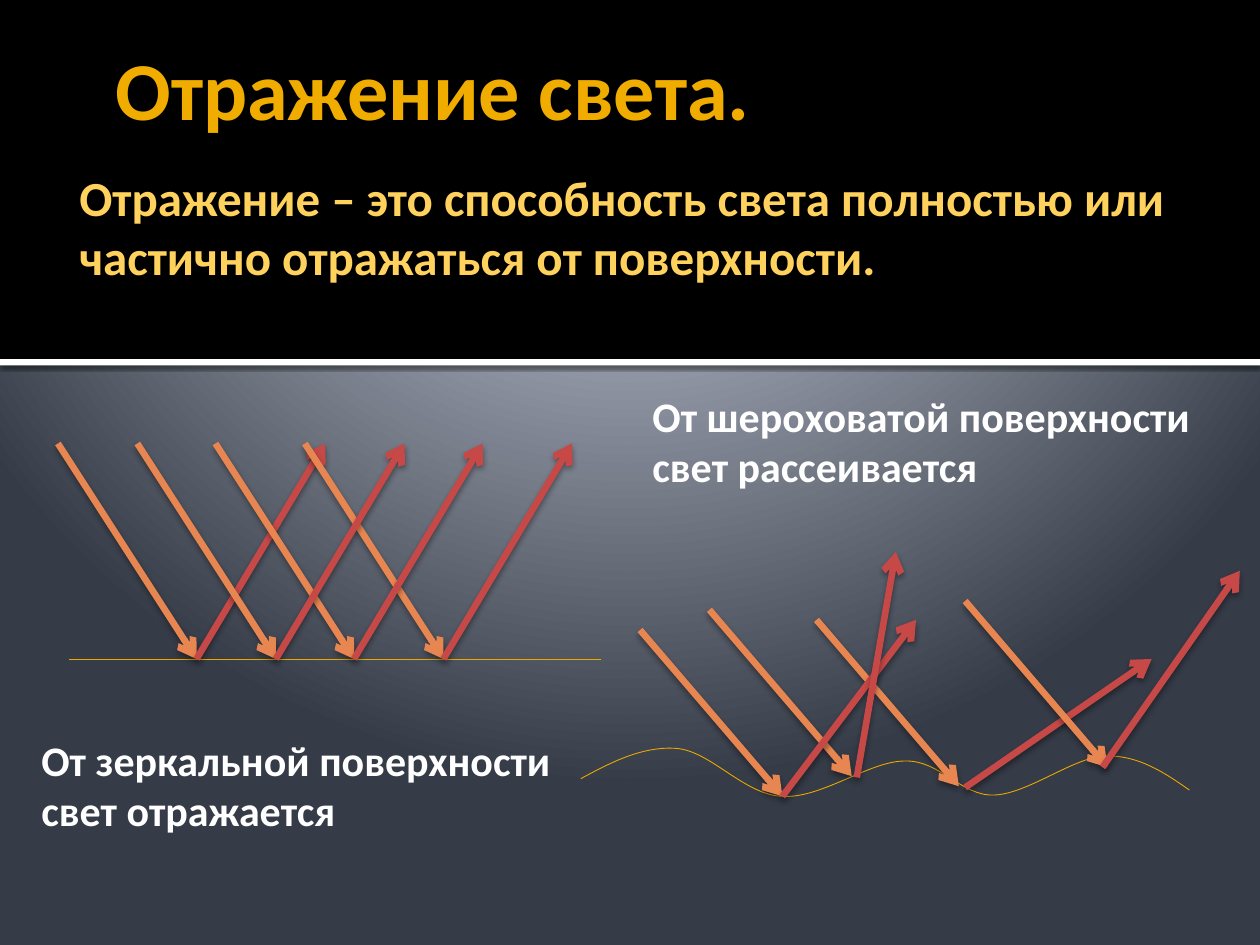
import pptx
import pptx.util
import pptx.dml.color
import pptx.enum.shapes
import pptx.enum.text
import pptx.oxml
import pptx.oxml.ns

COLS, ROWS = 10, 7.5
GOLD, INCIDENT, REFLECTED = "EBA900", "E88651", "C64847"
RAY_SHADOW = ("000000", 38, 3.5, 2, 90)
BAR_SHADOW = ("000000", 60, 2.5, 0.8, 90)
NS = pptx.oxml.ns.nsdecls("a")
qn = pptx.oxml.ns.qn


def rgb(value):
    return pptx.dml.color.RGBColor.from_string(value)


def xml(text):
    return pptx.oxml.parse_xml(text)


class Deck:
    """Holds the style and the current slide; lengths are grid columns and rows."""

    font = "Calibri"

    def __init__(self):
        self.prs = pptx.Presentation()
        self.prs.slide_width = pptx.util.Inches(10)
        self.prs.slide_height = pptx.util.Inches(7.5)
        self.s = self.prs.slides.add_slide(self.prs.slide_layouts[6])

    def x(self, col):
        return round(self.prs.slide_width * col / COLS)

    def y(self, row):
        return round(self.prs.slide_height * row / ROWS)

    def box(self, left, top, width, height):
        return self.x(left), self.y(top), self.x(width), self.y(height)

    def background(self, stops, left, top, right, bottom):
        fill = self.s.background.fill
        fill.gradient()
        grad = self.s.background._cSld.find(".//" + qn("a:gradFill"))
        gs = "".join(f'<a:gs pos="{pos * 1000}"><a:srgbClr val="{color}"/></a:gs>'
                     for pos, color in stops)
        grad.getparent().replace(grad, xml(
            f'<a:gradFill {NS} rotWithShape="1"><a:gsLst>{gs}</a:gsLst>'
            f'<a:path path="circle"><a:fillToRect l="{left * 1000}" t="{top * 1000}" '
            f'r="{right * 1000}" b="{bottom * 1000}"/></a:path></a:gradFill>'))

    def shadow(self, sp, effect=None):
        inner = ""
        if effect:
            color, alpha, blur, dist, angle = effect
            inner = (f'<a:outerShdw blurRad="{round(blur * 12700)}" '
                     f'dist="{round(dist * 12700)}" dir="{angle * 60000}" '
                     f'algn="ctr" rotWithShape="0"><a:srgbClr val="{color}">'
                     f'<a:alpha val="{alpha * 1000}"/></a:srgbClr></a:outerShdw>')
        spPr = sp._element.spPr
        for old in spPr.findall(qn("a:effectLst")):
            spPr.remove(old)
        spPr.append(xml(f"<a:effectLst {NS}>{inner}</a:effectLst>"))

    def rect(self, left, top, width, height, color, effect=None):
        sp = self.s.shapes.add_shape(pptx.enum.shapes.MSO_SHAPE.RECTANGLE,
                                     *self.box(left, top, width, height))
        sp.fill.solid()
        sp.fill.fore_color.rgb = rgb(color)
        sp.line.fill.background()
        self.shadow(sp, effect)

    def outline(self, sp, color, width):
        sp.line.color.rgb = rgb(color)
        sp.line.width = pptx.util.Pt(width)

    def line(self, start, end, color, width=0.5):
        sp = self.s.shapes.add_connector(
            pptx.enum.shapes.MSO_CONNECTOR.STRAIGHT,
            self.x(start[0]), self.y(start[1]), self.x(end[0]), self.y(end[1]))
        self.outline(sp, color, width)
        self.shadow(sp)
        return sp

    def ray(self, start, end, color):
        sp = self.line(start, end, color, 3.78)
        sp.line._get_or_add_ln().append(xml(f'<a:tailEnd {NS} type="arrow"/>'))
        self.shadow(sp, RAY_SHADOW)

    def curve(self, points, color, width=0.5):
        """Points are a start, then two handles and an end for each Bezier part."""
        pts = [(self.x(col), self.y(row)) for col, row in points]
        builder = self.s.shapes.build_freeform(*pts[0])
        builder.add_line_segments(pts[1:], close=False)
        sp = builder.convert_to_shape()
        steps = sp._element.findall(".//" + qn("a:lnTo"))
        for i in range(0, len(steps), 3):
            bezier = xml(f"<a:cubicBezTo {NS}/>")
            steps[i].addprevious(bezier)
            for step in steps[i:i + 3]:
                bezier.append(step[0])
                step.getparent().remove(step)
        sp.fill.background()
        self.outline(sp, color, width)
        self.shadow(sp)

    def text(self, words, left, top, width, height, size, color,
             insets=(0.1, 0.05, 0.1, 0.05), anchor="TOP"):
        sp = self.s.shapes.add_textbox(*self.box(left, top, width, height))
        tf = sp.text_frame
        sides = ("margin_left", "margin_top", "margin_right", "margin_bottom")
        frame = {side: pptx.util.Inches(v) for side, v in zip(sides, insets)}
        frame["word_wrap"] = True
        frame["vertical_anchor"] = getattr(pptx.enum.text.MSO_ANCHOR, anchor)
        for name, value in frame.items():
            setattr(tf, name, value)
        r = tf.paragraphs[0].add_run()
        r.text = words
        style = {"name": self.font, "size": pptx.util.Pt(size), "bold": True}
        for name, value in style.items():
            setattr(r.font, name, value)
        r.font.color.rgb = rgb(color)


def main():
    deck = Deck()

    # Backdrop and header band
    deck.background([(0, "C1C5D3"), (12, "C1C5D3"), (20, "BFC4D2"), (100, "353B47")],
                    10, -25, 10, 125)
    deck.rect(0, 0, COLS, 2.85, "000000")
    deck.rect(0, 2.85, COLS, 0.05, "FFFFFF", BAR_SHADOW)

    # Title and definition
    deck.text("Отражение света.", 0.82, 0.13, 8.76, 0.96, 47, "F0AD00",
              (0.1, 0, 0.1, 0), "BOTTOM")
    deck.text("Отражение – это способность света полностью или частично "
              "отражаться от поверхности.", 0.47, 1.33, 9.09, 1.02, 28, "FFD25D",
              (0.16, 0, 0.05, 0))

    # Mirror: parallel rays stay parallel
    top, mirror = 3.52, 5.23
    deck.line((0.55, mirror), (4.77, mirror), GOLD)
    hits = (1.56, 2.19, 2.81, 3.52)

    def mirror_in(hit):
        deck.ray((hit - 1.1, top), (hit, mirror), INCIDENT)

    def mirror_out(hit):
        deck.ray((hit, mirror), (hit + 1.02, top), REFLECTED)

    mirror_in(hits[0])
    mirror_out(hits[0])
    for hit in reversed(hits[1:]):
        mirror_in(hit)
    for hit in hits[1:]:
        mirror_out(hit)

    # Rough surface: parallel rays scatter
    deck.curve([(4.61, 6.18), (4.85, 6.05), (5.1, 5.92), (5.37, 5.94),
                (5.64, 5.96), (5.91, 6.31), (6.21, 6.32),
                (6.52, 6.34), (6.9, 6.04), (7.18, 6.04),
                (7.46, 6.03), (7.63, 6.32), (7.89, 6.31),
                (8.16, 6.3), (8.52, 6.01), (8.77, 6),
                (9.03, 5.99), (9.24, 6.13), (9.44, 6.27)], GOLD)
    scattered = [  # incident start, reflected start, reflected end
        ((5.08, 5), (6.21, 6.32), (7.27, 4.92)),
        ((5.63, 4.84), (6.8, 6.17), (7.11, 4.38)),
        ((6.48, 4.92), (7.66, 6.25), (9.14, 5.23)),
        ((7.66, 4.77), (8.75, 6.09), (9.84, 4.53)),
    ]
    # The second reflected ray crosses over the third incident one
    for (col, row), _, _ in scattered[:3]:
        deck.ray((col, row), (col + 1.13, row + 1.32), INCIDENT)
    for _, start, end in scattered[:3]:
        deck.ray(start, end, REFLECTED)
    (col, row), start, end = scattered[3]
    deck.ray((col, row), (col + 1.13, row + 1.32), INCIDENT)
    deck.ray(start, end, REFLECTED)

    # Captions
    deck.text("От зеркальной поверхности свет отражается",
              0.23, 5.78, 4.53, 0.91, 24, "FFFFFF")
    deck.text("От шероховатой поверхности свет рассеивается",
              5.08, 3.05, 4.77, 0.91, 24, "FFFFFF")

    deck.prs.save("out.pptx")


if __name__ == "__main__":
    main()
